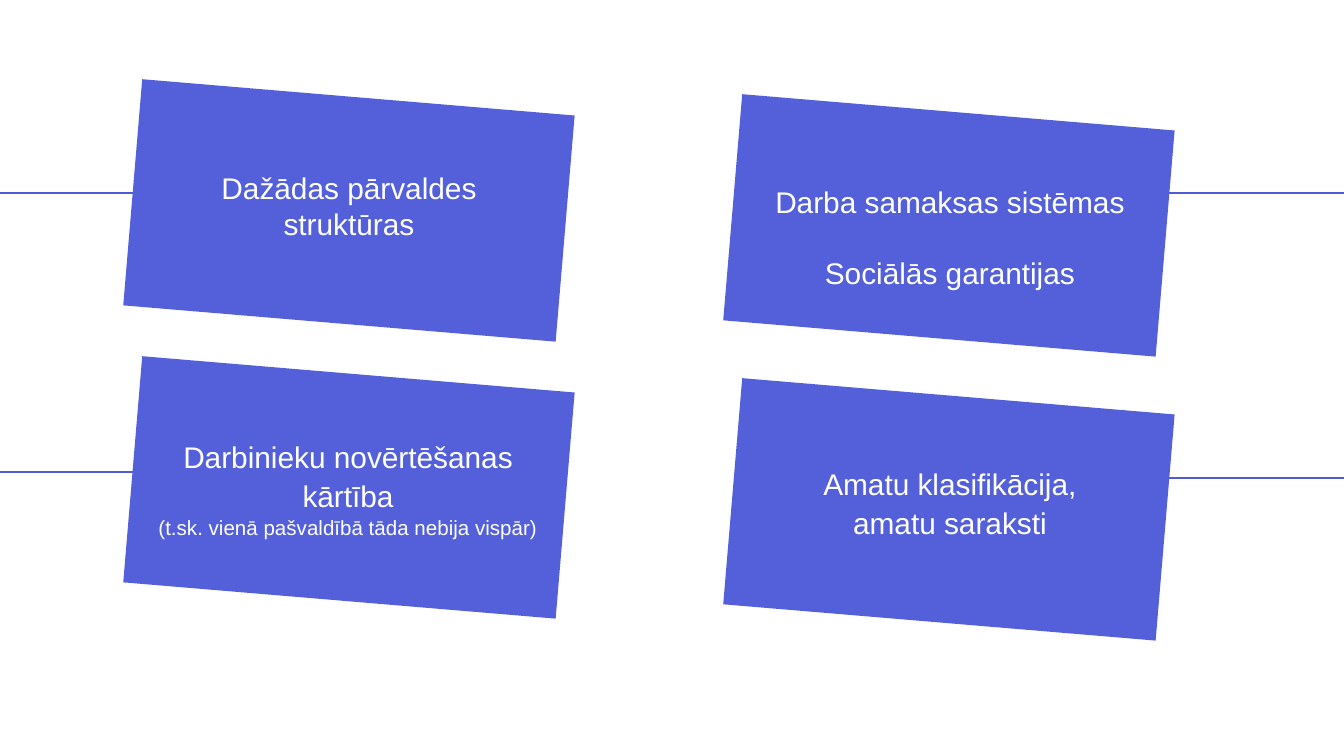
import pptx
import pptx.util
import pptx.dml.color
import pptx.enum.shapes
import pptx.enum.text
import pptx.oxml.ns
import lxml.etree

PX = 914400 / 134.4
CARD = pptx.dml.color.RGBColor(0x53, 0x60, 0xD9)
LINE = pptx.dml.color.RGBColor(0x4E, 0x5B, 0xD7)
WHITE = pptx.dml.color.RGBColor(0xFF, 0xFF, 0xFF)
Pt = pptx.util.Pt


def emu(*sizes):
    return [round(size * PX) for size in sizes]


deck = pptx.Presentation()
deck.slide_width, deck.slide_height = emu(1344, 756)
slide = deck.slides.add_slide(deck.slide_layouts[6])
shapes = slide.shapes

for left, top in [(1164, 193), (1164, 478), (-40, 472), (-40, 193)]:
    line = shapes.add_connector(
        pptx.enum.shapes.MSO_CONNECTOR.STRAIGHT, *emu(left, top, left + 226, top)
    )
    line.line.color.rgb = LINE
    line.line.width = Pt(1.5)
    props = line._element.spPr
    lxml.etree.SubElement(props, pptx.oxml.ns.qn("a:effectLst"))

for left, top in [(132, 374), (732, 396), (732, 112), (132, 97)]:
    card = shapes.add_shape(
        pptx.enum.shapes.MSO_SHAPE.RECTANGLE, *emu(left, top, 434, 227)
    )
    card.rotation = 4.8
    card.shadow.inherit = False
    card.fill.solid()
    card.fill.fore_color.rgb = CARD
    card.line.fill.background()

labels = [
    (172, 163, 354, 86, None, ["Dažādas pārvaldes struktūras"]),
    (744, 177, 412, 122, None, ["Darba samaksas sistēmas", "Sociālās garantijas"]),
    (143, 430, 410, 116, 1.07, ["Darbinieku novērtēšanas kārtība"]),
    (797, 457, 306, 89, 1.07, ["Amatu klasifikācija, amatu saraksti"]),
]
notes = {"Darbinieku novērtēšanas kārtība": "(t.sk. vienā pašvaldībā tāda nebija vispār)"}

for left, top, width, height, pitch, texts in labels:
    frame = shapes.add_textbox(*emu(left, top, width, height)).text_frame
    frame.word_wrap = True
    frame.auto_size = pptx.enum.text.MSO_AUTO_SIZE.SHAPE_TO_FIT_TEXT
    for row, text in enumerate(texts):
        para = frame.add_paragraph() if row else frame.paragraphs[0]
        para.alignment = pptx.enum.text.PP_ALIGN.CENTER
        if row:
            para.space_before = Pt(19)
        if pitch:
            para.line_spacing = pitch
            para.space_after = Pt(8)
        para.font.name = "Arial"
        para.font.color.rgb = WHITE
        para.font.size = Pt(16)
        para.add_run().text = text
        if text in notes:
            para.add_line_break()
            note = para.add_run()
            note.text = notes[text]
            note.font.size = Pt(11)

deck.save("out.pptx")
